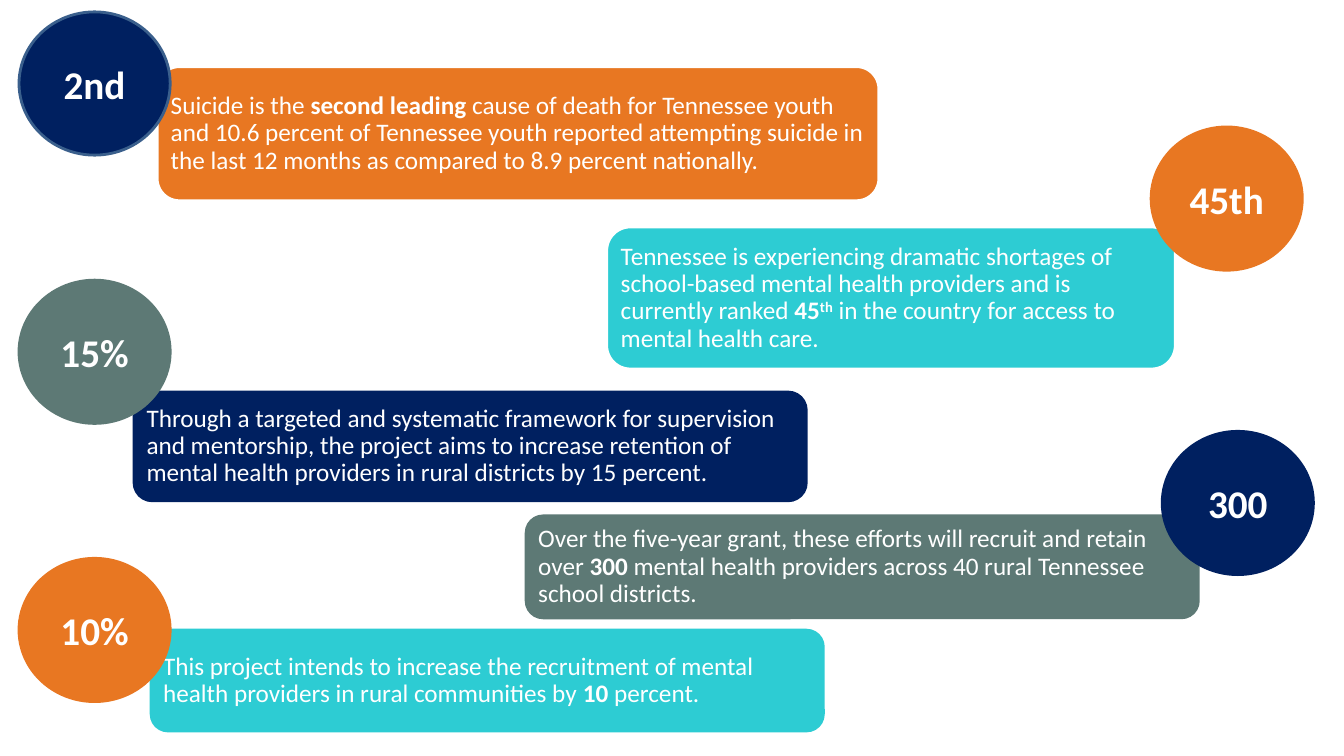
from pptx import Presentation
from pptx.dml.color import RGBColor
from pptx.enum.shapes import MSO_SHAPE
from pptx.enum.text import MSO_ANCHOR, PP_ALIGN
from pptx.util import Cm, Pt

WHITE = RGBColor(0xFF, 0xFF, 0xFF)
ORANGE = RGBColor(0xE8, 0x77, 0x22)
TEAL = RGBColor(0x2D, 0xCC, 0xD3)
NAVY = RGBColor(0x00, 0x20, 0x60)
GREY = RGBColor(0x5D, 0x79, 0x75)
BLUE = RGBColor(0x3A, 0x5F, 0x8C)

# Left, top, width, height in cm; fill, line; runs with their style
CARDS = [
    (3.96, 1.68, 18.19, 3.38, ORANGE, WHITE, [
        ("Suicide is the ", ""),
        ("second leading ", "bold"),
        ("cause of death for Tennessee youth and 10.6 percent of Tennessee "
         "youth reported attempting suicide in the last 12 months as "
         "compared to 8.9 percent nationally.", "")]),
    (15.29, 5.72, 14.33, 3.58, TEAL, WHITE, [
        ("Tennessee is experiencing dramatic shortages of school-based "
         "mental health providers and is currently ranked ", ""),
        ("45", "bold"),
        ("th", "bold super"),
        (" in the country for access to mental health care.", "")]),
    (3.38, 9.88, 16.94, 2.74, NAVY, NAVY, [
        ("Through a targeted and systematic framework for supervision and "
         "mentorship, the project aims to increase retention of mental "
         "health providers in rural districts by 15 percent.", "")]),
    (13.26, 13, 16.94, 2.57, GREY, GREY, [
        ("Over the five-year grant, these efforts will recruit and retain "
         "over ", ""),
        ("300", "bold"),
        (" mental health providers across 40 rural Tennessee school "
         "districts.", "")]),
    (3.81, 15.88, 16.94, 2.54, TEAL, TEAL, [
        ("This project intends to increase the recruitment of mental health "
         "providers in rural communities by ", ""),
        ("10", "bold"),
        (" percent.", "")]),
]

# Left, top in cm; fill, line; figure
DISCS = [
    (0.48, 0.3, NAVY, BLUE, "2nd"),
    (29.01, 3.2, ORANGE, ORANGE, "45th"),
    (0.48, 7.06, GREY, GREY, "15%"),
    (29.29, 10.87, NAVY, NAVY, "300"),
    (0.48, 14.07, ORANGE, ORANGE, "10%"),
]
DISC_W, DISC_H = 3.81, 3.61
INSET = Cm(0.18)


def add_block(kind, left, top, width, height, fill, line):
    shape = slide.shapes.add_shape(
        kind, Cm(left), Cm(top), Cm(width), Cm(height))
    shape.shadow.inherit = False
    shape.fill.solid()
    shape.fill.fore_color.rgb = fill
    shape.line.color.rgb = line
    shape.line.width = Pt(2)
    frame = shape.text_frame
    frame.word_wrap = True
    frame.vertical_anchor = MSO_ANCHOR.MIDDLE
    return frame


def set_font(run, size, bold):
    run.font.name = "Calibri"
    run.font.size = Pt(size)
    run.font.bold = bold
    run.font.color.rgb = WHITE


prs = Presentation()
prs.slide_width, prs.slide_height = Cm(33.87), Cm(19.05)
slide = prs.slides.add_slide(prs.slide_layouts[6])

for *box, fill, line, parts in CARDS:
    frame = add_block(MSO_SHAPE.ROUNDED_RECTANGLE, *box, fill, line)
    frame.margin_left = frame.margin_right = INSET
    frame.margin_top = frame.margin_bottom = INSET
    para = frame.paragraphs[0]
    para.alignment = PP_ALIGN.LEFT
    para.line_spacing = 0.9
    for text, style in parts:
        run = para.add_run()
        run.text = text
        set_font(run, 18, "bold" in style)
        if "super" in style:
            run.font._element.set("baseline", "30000")

for left, top, fill, line, figure in DISCS:
    frame = add_block(
        MSO_SHAPE.OVAL, left, top, DISC_W, DISC_H, fill, line)
    frame.text = figure
    para = frame.paragraphs[0]
    para.alignment = PP_ALIGN.CENTER
    set_font(para.runs[0], 28, True)

prs.save("out.pptx")
